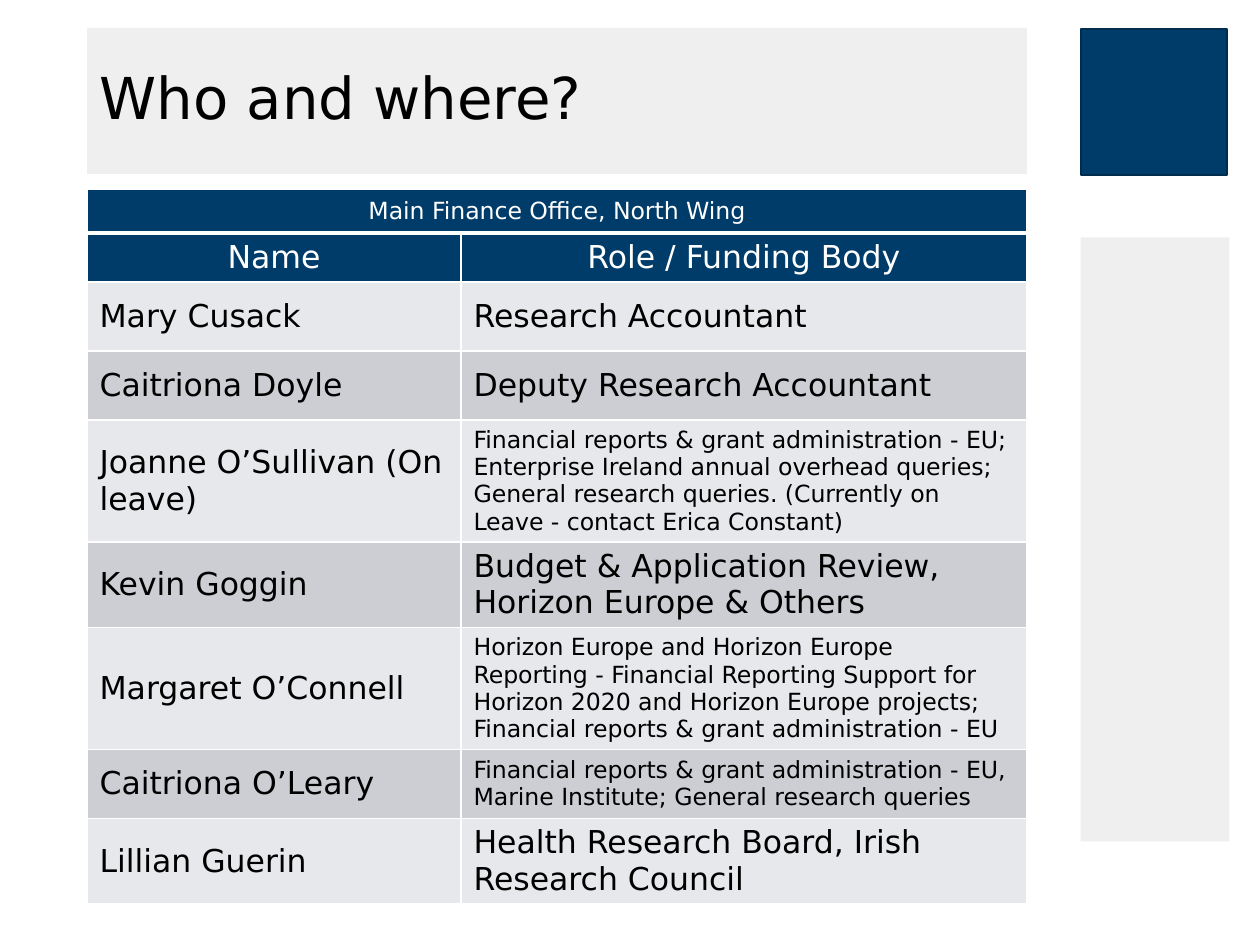
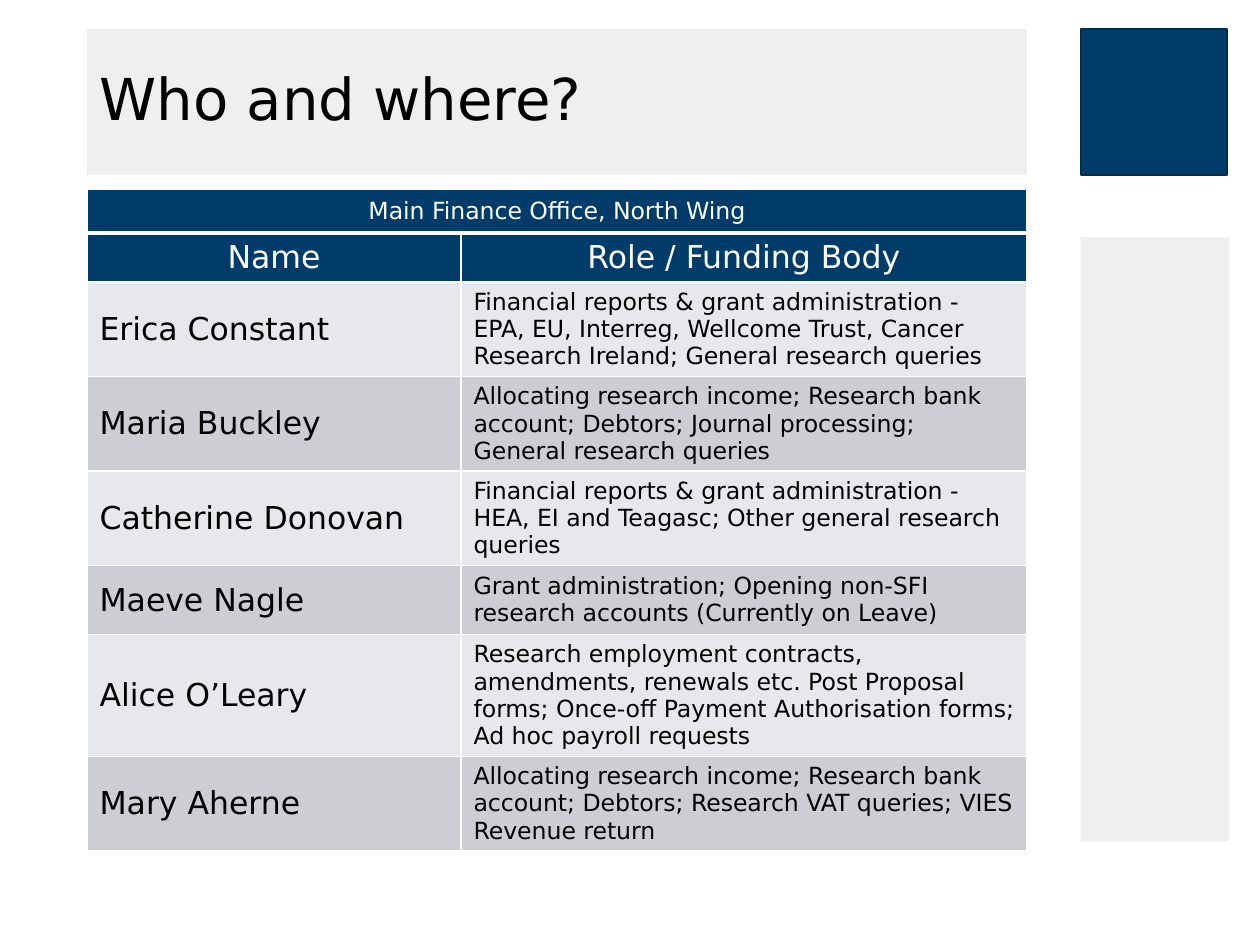
from lxml.etree import SubElement
from pptx import Presentation
from pptx.dml.color import RGBColor
from pptx.enum.shapes import MSO_SHAPE as Preset
from pptx.enum.text import MSO_ANCHOR as Anchor, MSO_AUTO_SIZE as AutoSize, PP_ALIGN as Align
from pptx.oxml.ns import qn
from pptx.util import Emu, Pt

PX_PER_INCH = 126
FONT = "DejaVu Sans"
NAVY, NAVY_EDGE, PALE = "003C69", "002C4E", "EFEFF0"
BANDS = ("E7E8EB", "CCCED4")
WHITE, BLACK = "FFFFFF", "000000"
LARGE, SMALL = 18, 13.5

SIDE_PANEL = (853, 465, 604, 149)  # turned upright by a quarter turn
SIDE_SQUARE = (1081, 29, 146, 146)
TABLE_LEFT, TABLE_TOP = 87, 189
COLUMNS = (374, 566)
HEADER_HEIGHT, ROW_HEIGHT = 44, 69

OFFICE = "Main Finance Office, North Wing"
HEADINGS = ("Name", "Role / Funding Body")

# Each person: name, role, size of the role text
FIRST_STAFF = [
    ("Mary Cusack", "Research Accountant", LARGE),
    ("Caitriona Doyle", "Deputy Research Accountant", LARGE),
    ("Joanne O’Sullivan (On leave)",
     "Financial reports & grant administration - EU; Enterprise Ireland annual overhead "
     "queries; General research queries. (Currently on Leave - contact Erica Constant)", SMALL),
    ("Kevin Goggin", "Budget & Application Review, Horizon Europe & Others", LARGE),
    ("Margaret O’Connell",
     "Horizon Europe and Horizon Europe Reporting - Financial Reporting Support for "
     "Horizon 2020 and Horizon Europe projects; Financial reports & grant "
     "administration - EU", SMALL),
    ("Caitriona O’Leary",
     "Financial reports & grant administration - EU, Marine Institute; "
     "General research queries", SMALL),
    ("Lillian Guerin", "Health Research Board, Irish Research Council", LARGE),
]
SECOND_STAFF = [
    ("Erica Constant",
     "Financial reports & grant administration - EPA, EU, Interreg, Wellcome Trust, "
     "Cancer Research Ireland; General research queries", SMALL),
    ("Maria Buckley",
     "Allocating research income; Research bank account; Debtors; Journal processing; "
     "General research queries", SMALL),
    ("Catherine Donovan",
     "Financial reports & grant administration - HEA, EI and Teagasc; "
     "Other general research queries", SMALL),
    ("Maeve Nagle",
     "Grant administration; Opening non-SFI research accounts (Currently on Leave)", SMALL),
    ("Alice O’Leary",
     "Research employment contracts, amendments, renewals etc. Post Proposal forms; "
     "Once-off Payment Authorisation forms; Ad hoc payroll requests", SMALL),
    ("Mary Aherne",
     "Allocating research income; Research bank account; Debtors; Research VAT queries; "
     "VIES Revenue return", SMALL),
]


def px(length):
    return Emu(round(length * 914400 / PX_PER_INCH))


def color(hex_value):
    return RGBColor.from_string(hex_value)


def paint(target, hex_value):
    target.fill.solid()
    target.fill.fore_color.rgb = color(hex_value)


def write(paragraph, text, size, hex_value, align=Align.LEFT):
    paragraph.alignment = align
    run = paragraph.add_run()
    run.text = text
    run.font.name = FONT
    run.font.size = Pt(size)
    run.font.bold = False
    run.font.color.rgb = color(hex_value)


def add_block(slide, box, fill, edge=None, rotation=0):
    shape = slide.shapes.add_shape(Preset.RECTANGLE, *map(px, box))
    shape.shadow.inherit = False
    shape.rotation = rotation
    paint(shape, fill)
    if edge:
        shape.line.color.rgb = color(edge)
        shape.line.width = Pt(1)
    else:
        shape.line.fill.background()


def add_title(slide, box, text):
    title = slide.shapes.title
    title.left, title.top, title.width, title.height = map(px, box)
    paint(title, PALE)
    frame = title.text_frame
    frame.word_wrap = True
    frame.auto_size = AutoSize.NONE
    frame.vertical_anchor = Anchor.MIDDLE
    paragraph = frame.paragraphs[0]
    paragraph.line_spacing = 0.9
    write(paragraph, text, 33, BLACK)


def set_borders(cell, top=1, bottom=1):
    properties = cell._tc.get_or_add_tcPr()
    sides = (("lnL", 1), ("lnR", 1), ("lnT", top), ("lnB", bottom))
    for index, (side, width) in enumerate(sides):
        line = SubElement(properties, qn(f"a:{side}"), w=str(Pt(width)))
        fill = SubElement(line, qn("a:solidFill"))
        SubElement(fill, qn("a:srgbClr"), val=WHITE)
        properties.insert(index, line)  # borders come before the fill


def fill_cell(cell, text, size, fill, text_color=BLACK, align=Align.LEFT, **borders):
    paint(cell, fill)
    set_borders(cell, **borders)
    cell.vertical_anchor = Anchor.MIDDLE
    if text:
        write(cell.text_frame.paragraphs[0], text, size, text_color, align)


def add_staff_table(slide, left, top, staff):
    heights = [HEADER_HEIGHT] * 2 + [ROW_HEIGHT] * len(staff)
    box = (left, top, sum(COLUMNS), sum(heights))
    table = slide.shapes.add_table(len(heights), len(COLUMNS), *map(px, box)).table
    table.first_row = table.horz_banding = False
    for column, width in zip(table.columns, COLUMNS):
        column.width = px(width)
    for row, height in zip(table.rows, heights):
        row.height = px(height)

    # Office band across both columns, then the headings
    table.cell(0, 0).merge(table.cell(0, 1))
    for index, text in enumerate((OFFICE, None)):
        fill_cell(table.cell(0, index), text, SMALL, NAVY, WHITE, Align.CENTER, bottom=3)
    for index, text in enumerate(HEADINGS):
        fill_cell(table.cell(1, index), text, LARGE, NAVY, WHITE, Align.CENTER, top=3)

    # One banded row per person
    for index, (name, role, role_size) in enumerate(staff):
        band = BANDS[index % 2]
        fill_cell(table.cell(index + 2, 0), name, LARGE, band)
        fill_cell(table.cell(index + 2, 1), role, role_size, band)


def add_staff_slide(presentation, title_top, staff):
    slide = presentation.slides.add_slide(presentation.slide_layouts[5])
    add_block(slide, SIDE_PANEL, PALE, rotation=90)
    add_block(slide, SIDE_SQUARE, NAVY, NAVY_EDGE)
    add_title(slide, (TABLE_LEFT, title_top, sum(COLUMNS), 146), "Who and where?")
    add_staff_table(slide, TABLE_LEFT, TABLE_TOP, staff)


def main():
    presentation = Presentation()
    presentation.slide_width, presentation.slide_height = px(1260), px(945)
    add_staff_slide(presentation, 28, FIRST_STAFF)
    add_staff_slide(presentation, 29, SECOND_STAFF)
    presentation.save("out.pptx")


if __name__ == "__main__":
    main()
